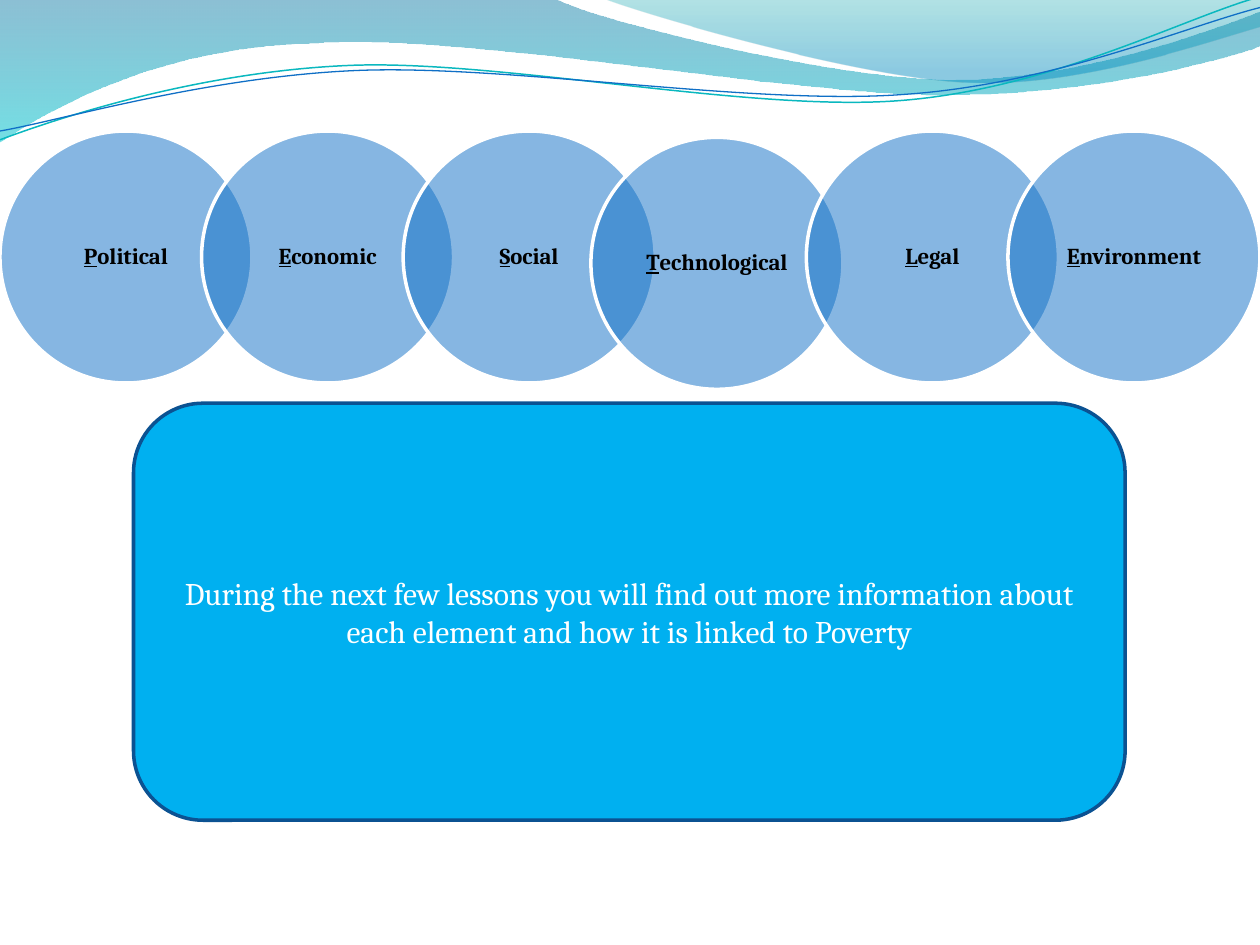
"""Build the PESTLE overview slide: wave header, six linked circles and a message panel."""
import pptx
import pptx.util
import pptx.dml.color
import pptx.enum.shapes
import pptx.enum.text
import pptx.oxml
import pptx.oxml.ns

Inches, Pt = pptx.util.Inches, pptx.util.Pt
SHAPES = pptx.enum.shapes.MSO_SHAPE

COLORS = {
    "deep": "0074A1", "aqua": "00C6CF", "teal": "00A1A9", "sky": "008BBF",
    "teal_line": "0AB8BF", "blue": "0F6FC6", "panel": "00B0F0",
    "panel_edge": "0B5292", "white": "FFFFFF", "black": "000000",
}

WAVES = [
    {"start": (0, 0),
     "segments": [[(4.4, -0.01)],
                  [(4.76, 0.17), (6.64, 0.63), (7.58, 0.63)],
                  [(8.53, 0.63), (9.58, 0.26), (10, 0.09)],
                  [(10.01, 0.36)],
                  [(9.83, 0.44), (8.7, 0.76), (7.46, 0.75)],
                  [(6.22, 0.75), (3.82, 0.28), (2.57, 0.34)],
                  [(1.29, 0.36), (0.46, 0.83), (-0.01, 1.13)],
                  [(0, 0)]],
     "stops": [(0, "deep", 45), (1, "aqua", 55)]},
    {"start": (4.79, -0.01),
     "segments": [[(5.09, 0.11), (6.82, 0.62), (7.69, 0.65)],
                  [(8.56, 0.69), (9.61, 0.32), (10, 0.21)],
                  [(10, 0)],
                  [(4.79, -0.01)]],
     "stops": [(0, "teal", 30), (0.8, "sky", 45)]},
    {"start": (0, 1.11),
     "segments": [[(0.48, 0.93), (1.58, 0.57), (2.77, 0.52)],
                  [(3.95, 0.47), (5.93, 0.89), (7.13, 0.8)],
                  [(8.33, 0.71), (9.38, 0.15), (9.98, -0.02)]],
     "line": ("teal_line", 0.85)},
    {"start": (0, 1.04),
     "segments": [[(0.47, 0.96), (1.64, 0.61), (2.83, 0.56)],
                  [(4.03, 0.51), (5.97, 0.84), (7.17, 0.75)],
                  [(8.36, 0.67), (9.41, 0.21), (10, 0.06)]],
     "line": ("blue", 0.75)},
]

FACTORS = ["Political", "Economic", "Social", "Technological", "Legal", "Environment"]
NUDGES = {"Technological": (-0.11, 0.05)}
DIAMETER, STEP, CIRCLE_TOP = 2, 1.6, 1.04
CIRCLE_FRAME = {"margin_left": Inches(0.11), "margin_right": Inches(0.11),
                "margin_top": Inches(0.02), "margin_bottom": Inches(0.02)}
FACTOR_FONT = {"name": "Cambria", "size": Pt(13), "bold": True}

MESSAGE = ("During the next few lessons you will find out more information about "
           "each element and how it is linked to Poverty")
PANEL_BOX = (1.06, 3.2, 7.87, 3.31)
MESSAGE_FONT = {"name": "Cambria", "size": Pt(18), "bold": False}


def rgb(name):
    return pptx.dml.color.RGBColor.from_string(COLORS[name])


def apply(target, values):
    for attribute, value in values.items():
        setattr(target, attribute, value)


def set_opacity(color_element, percent):
    alpha = pptx.oxml.parse_xml(f'<a:alpha {pptx.oxml.ns.nsdecls("a")} val="{percent * 1000}"/>')
    color_element.append(alpha)


def outline(shape, color, width):
    shape.line.color.rgb = rgb(color)
    shape.line.width = Pt(width)


def curve_segments(wave_shape, segments):
    line_steps = wave_shape._element.xpath(".//a:path/a:lnTo")
    for points in segments:
        steps, line_steps = line_steps[:len(points)], line_steps[len(points):]
        if len(steps) == 3:
            curve = pptx.oxml.parse_xml(f'<a:cubicBezTo {pptx.oxml.ns.nsdecls("a")}/>')
            steps[0].addprevious(curve)
            for step in steps:
                curve.append(step[0])
                step.getparent().remove(step)


def add_wave(slide, wave):
    points = [(Inches(x), Inches(y)) for segment in wave["segments"] for x, y in segment]
    builder = slide.shapes.build_freeform(*map(Inches, wave["start"]))
    builder.add_line_segments(points, close="stops" in wave)
    shape = builder.convert_to_shape()
    shape.shadow.inherit = False
    curve_segments(shape, wave["segments"])
    if "line" in wave:
        shape.fill.background()
        outline(shape, *wave["line"])
        return
    shape.line.fill.background()
    shape.fill.gradient()
    shape.fill.gradient_angle = 270
    for stop, (position, color, _) in zip(shape.fill.gradient_stops, wave["stops"]):
        stop.position = position
        stop.color.rgb = rgb(color)
    stop_colors = shape._element.xpath("./p:spPr/a:gradFill//a:srgbClr")
    for stop_color, (_, _, opacity) in zip(stop_colors, wave["stops"]):
        set_opacity(stop_color, opacity)


def add_block(slide, preset, box, fill, edge):
    block = slide.shapes.add_shape(preset, *map(Inches, box))
    block.shadow.inherit = False
    block.fill.solid()
    block.fill.fore_color.rgb = rgb(fill)
    outline(block, edge, 2)
    block.text_frame.word_wrap = True
    block.text_frame.vertical_anchor = pptx.enum.text.MSO_ANCHOR.MIDDLE
    block.text_frame.paragraphs[0].alignment = pptx.enum.text.PP_ALIGN.CENTER
    return block


def add_run(paragraph, text, font, color, underline=False):
    run = paragraph.add_run()
    run.text = text
    apply(run.font, {**font, "underline": underline})
    run.font.color.rgb = rgb(color)


def add_factor(slide, index, factor):
    dx, dy = NUDGES.get(factor, (0, 0))
    box = (index * STEP + dx, CIRCLE_TOP + dy, DIAMETER, DIAMETER)
    circle = add_block(slide, SHAPES.OVAL, box, "blue", "white")
    set_opacity(circle._element.xpath("./p:spPr/a:solidFill/a:srgbClr")[0], 50)
    apply(circle.text_frame, CIRCLE_FRAME)
    label = circle.text_frame.paragraphs[0]
    label.line_spacing = 0.9
    add_run(label, factor[0], FACTOR_FONT, "black", underline=True)
    add_run(label, factor[1:], FACTOR_FONT, "black")


def main():
    deck = pptx.Presentation()
    apply(deck, {"slide_width": Inches(10), "slide_height": Inches(7.5)})
    slide = deck.slides.add_slide(deck.slide_layouts[6])
    for wave in WAVES:
        add_wave(slide, wave)
    for index, factor in enumerate(FACTORS):
        add_factor(slide, index, factor)
    panel = add_block(slide, SHAPES.ROUNDED_RECTANGLE, PANEL_BOX, "panel", "panel_edge")
    add_run(panel.text_frame.paragraphs[0], MESSAGE, MESSAGE_FONT, "white")
    deck.save("out.pptx")


if __name__ == "__main__":
    main()
